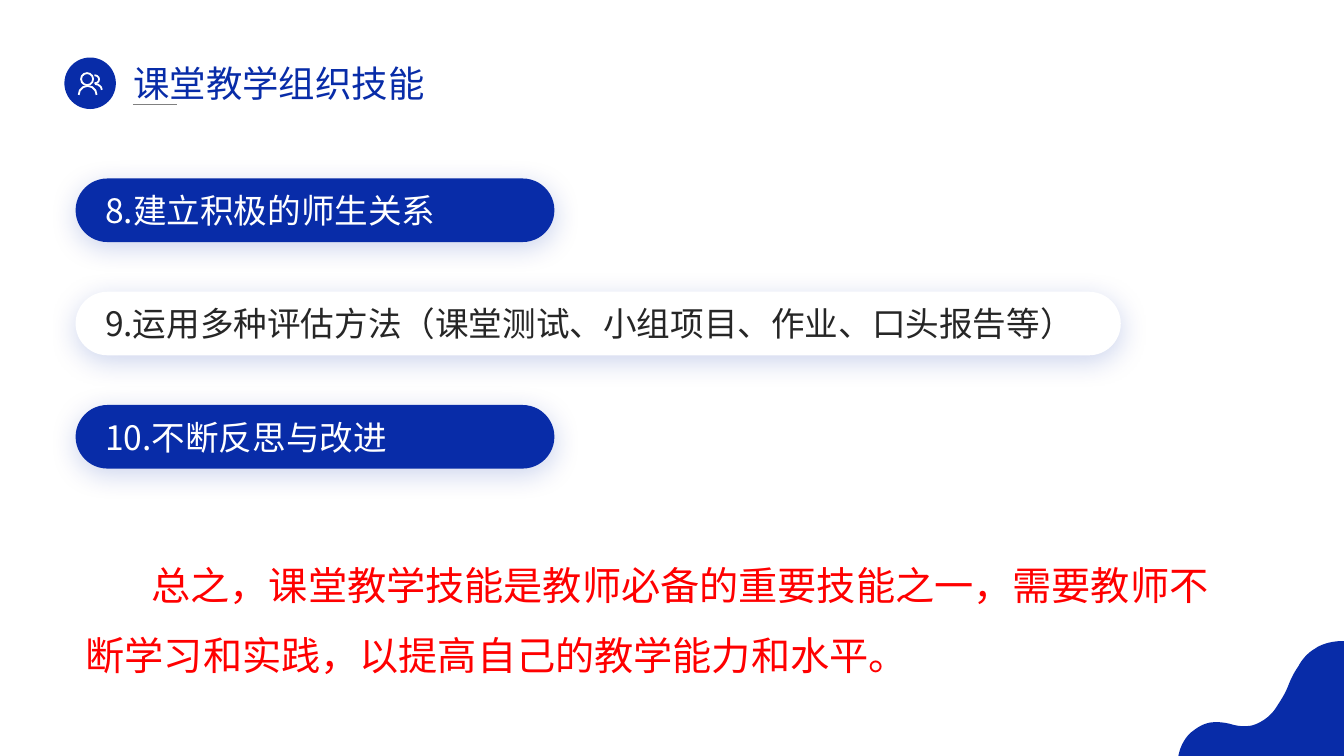
from dataclasses import dataclass

from lxml.etree import SubElement
from pptx import Presentation
from pptx.dml.color import RGBColor
from pptx.enum.shapes import MSO_CONNECTOR as Connector, MSO_SHAPE as Preset
from pptx.enum.text import MSO_ANCHOR as Anchor, MSO_AUTO_SIZE as AutoSize, PP_ALIGN as Align
from pptx.oxml.ns import qn
from pptx.shapes.autoshape import Shape
from pptx.shapes.shapetree import SlideShapes
from pptx.slide import Slide
from pptx.text.text import TextFrame
from pptx.util import Pt

FONT = "Noto Sans CJK SC"
COLORS = {"blue": "082CA8", "white": "FFFFFF", "dark": "262626", "red": "FF0000", "gray": "808080"}
PILL_LEFT, PILL_TOP, PILL_HEIGHT, PILL_PITCH = 54, 127.5, 45.4, 80.9

WAVE_START = (956, 458)
WAVE_CURVES = [
    ((950, 458.5), (944, 460), (939, 463.5)),
    ((934, 466.5), (930, 471), (927.4, 476)),
    ((924.5, 480), (922, 485), (920, 490.3)),
    ((918, 495.5), (915, 500), (912, 504.7)),
    ((909.4, 509), (905.8, 512.6), (900.7, 515.5)),
    ((898, 517), (895, 518.4), (891.4, 518.6)),
    ((887, 519), (882.7, 518.4), (878.4, 517)),
    ((874, 516), (869.8, 515.5), (865.4, 516)),
    ((861.5, 516.3), (857, 518.5), (853.2, 521.3)),
    ((846.7, 525.6), (843, 533), (841.7, 540)),
]

Point = tuple[float, float]


@dataclass(frozen=True)
class Pill:
    text: str
    width: float
    fill: str
    color: str


@dataclass(frozen=True)
class IconArc:
    left: float
    top: float
    width: float
    height: float
    start: float
    end: float


PILLS = [
    Pill("8.建立积极的师生关系", 342, "blue", "white"),
    Pill("9.运用多种评估方法（课堂测试、小组项目、作业、口头报告等）", 746.6, "white", "dark"),
    Pill("10.不断反思与改进", 342, "blue", "white"),
]
ICON_ARCS = [
    IconArc(56.2, 61.4, 12.8, 12.8, 180, 0),
    IconArc(65.2, 53.9, 5.6, 5.6, 260, 100),
    IconArc(62.6, 60, 10.2, 8.4, 275, 0),
]


def rgb(name: str) -> RGBColor:
    return RGBColor.from_string(COLORS[name])


def paint(shape: Shape, color: str) -> None:
    shape.shadow.inherit = False
    shape.fill.solid()
    shape.fill.fore_color.rgb = rgb(color)
    shape.line.fill.background()


def write(frame: TextFrame, text: str, size: float, color: str) -> None:
    frame.text = text
    paragraph = frame.paragraphs[0]
    paragraph.alignment = Align.LEFT
    paragraph.space_before = Pt(0)
    font = paragraph.font
    font.size = Pt(size)
    font.color.rgb = rgb(color)
    font.name = FONT
    properties = paragraph._p.pPr.find(qn("a:defRPr"))
    SubElement(properties, qn("a:ea"), typeface=FONT)


def place(shape: Shape, left: float, top: float, width: float, height: float) -> None:
    shape.left, shape.top, shape.width, shape.height = Pt(left), Pt(top), Pt(width), Pt(height)
    shape.text_frame.auto_size = AutoSize.NONE
    shape.text_frame.vertical_anchor = Anchor.TOP


def curve_points(start: Point, first: Point, second: Point, end: Point) -> list[Point]:
    steps = [step / 8 for step in range(1, 9)]
    return [
        tuple(
            (1 - t) ** 3 * a + 3 * (1 - t) ** 2 * t * b + 3 * (1 - t) * t**2 * c + t**3 * d
            for a, b, c, d in zip(start, first, second, end)
        )
        for t in steps
    ]


def draw_wave(shapes: SlideShapes) -> None:
    outline: list[Point] = []
    start = WAVE_START
    for curve in WAVE_CURVES:
        outline += curve_points(start, *curve)
        start = curve[-1]
    outline += [(960, 540), (960, 458)]
    builder = shapes.build_freeform(Pt(WAVE_START[0]), Pt(WAVE_START[1]))
    builder.add_line_segments([(Pt(x), Pt(y)) for x, y in outline], close=True)
    paint(builder.convert_to_shape(), "blue")


def draw_icon(shapes: SlideShapes) -> None:
    disc = shapes.add_shape(Preset.OVAL, Pt(46), Pt(41.1), Pt(36.8), Pt(36.8))
    paint(disc, "blue")
    head = shapes.add_shape(Preset.OVAL, Pt(57.9), Pt(52.2), Pt(8.6), Pt(8.6))
    parts = [head]
    for arc in ICON_ARCS:
        shape = shapes.add_shape(Preset.ARC, Pt(arc.left), Pt(arc.top), Pt(arc.width), Pt(arc.height))
        shape.adjustments[0] = arc.start * 0.6
        shape.adjustments[1] = arc.end * 0.6
        parts.append(shape)
    for part in parts:
        part.shadow.inherit = False
        part.fill.background()
        part.line.color.rgb = rgb("white")
        part.line.width = Pt(1.3)


def draw_title(slide: Slide) -> None:
    rule = slide.shapes.add_connector(Connector.STRAIGHT, Pt(95), Pt(74.6), Pt(126.5), Pt(74.6))
    rule.line.color.rgb = rgb("gray")
    rule.line.width = Pt(0.5)
    SubElement(rule._element.spPr, qn("a:effectLst"))
    title = slide.shapes.title
    place(title, 88, 40.3, 224.6, 38.9)
    write(title.text_frame, "课堂教学组织技能", 26, "blue")
    title.text_frame.word_wrap = False


def add_glow(shape: Shape) -> None:
    effects = shape._element.spPr.find(qn("a:effectLst"))
    shadow = SubElement(
        effects, qn("a:outerShdw"), blurRad=str(Pt(20)), dist=str(Pt(4)), dir="5400000", algn="t", rotWithShape="0"
    )
    color = SubElement(shadow, qn("a:srgbClr"), val=COLORS["blue"])
    SubElement(color, qn("a:alpha"), val="20000")


def draw_pill(shapes: SlideShapes, pill: Pill, top: float) -> None:
    shape = shapes.add_shape(Preset.ROUNDED_RECTANGLE, Pt(PILL_LEFT), Pt(top), Pt(pill.width), Pt(PILL_HEIGHT))
    shape.adjustments[0] = 0.5
    paint(shape, pill.fill)
    add_glow(shape)
    frame = shape.text_frame
    frame.word_wrap = True
    frame.vertical_anchor = Anchor.MIDDLE
    frame.margin_left = frame.margin_right = Pt(14.4)
    write(frame, pill.text, 24, pill.color)


def draw_conclusion(slide: Slide) -> None:
    body = slide.placeholders[1]
    place(body, 54, 380.2, 837.4, 103.7)
    text = "总之，课堂教学技能是教师必备的重要技能之一，需要教师不断学习和实践，以提高自己的教学能力和水平。"
    write(body.text_frame, text, 28, "red")
    paragraph = body.text_frame.paragraphs[0]
    paragraph.line_spacing = 1.5
    properties = paragraph._p.pPr
    properties.set("marL", "0")
    properties.set("indent", str(Pt(47)))
    properties.find(qn("a:defRPr")).addprevious(SubElement(properties, qn("a:buNone")))


def main() -> None:
    presentation = Presentation()
    presentation.slide_width, presentation.slide_height = Pt(960), Pt(540)
    slide = presentation.slides.add_slide(presentation.slide_layouts[1])
    draw_wave(slide.shapes)
    draw_icon(slide.shapes)
    draw_title(slide)
    for index, pill in enumerate(PILLS):
        draw_pill(slide.shapes, pill, PILL_TOP + index * PILL_PITCH)
    draw_conclusion(slide)
    presentation.save("out.pptx")


if __name__ == "__main__":
    main()
